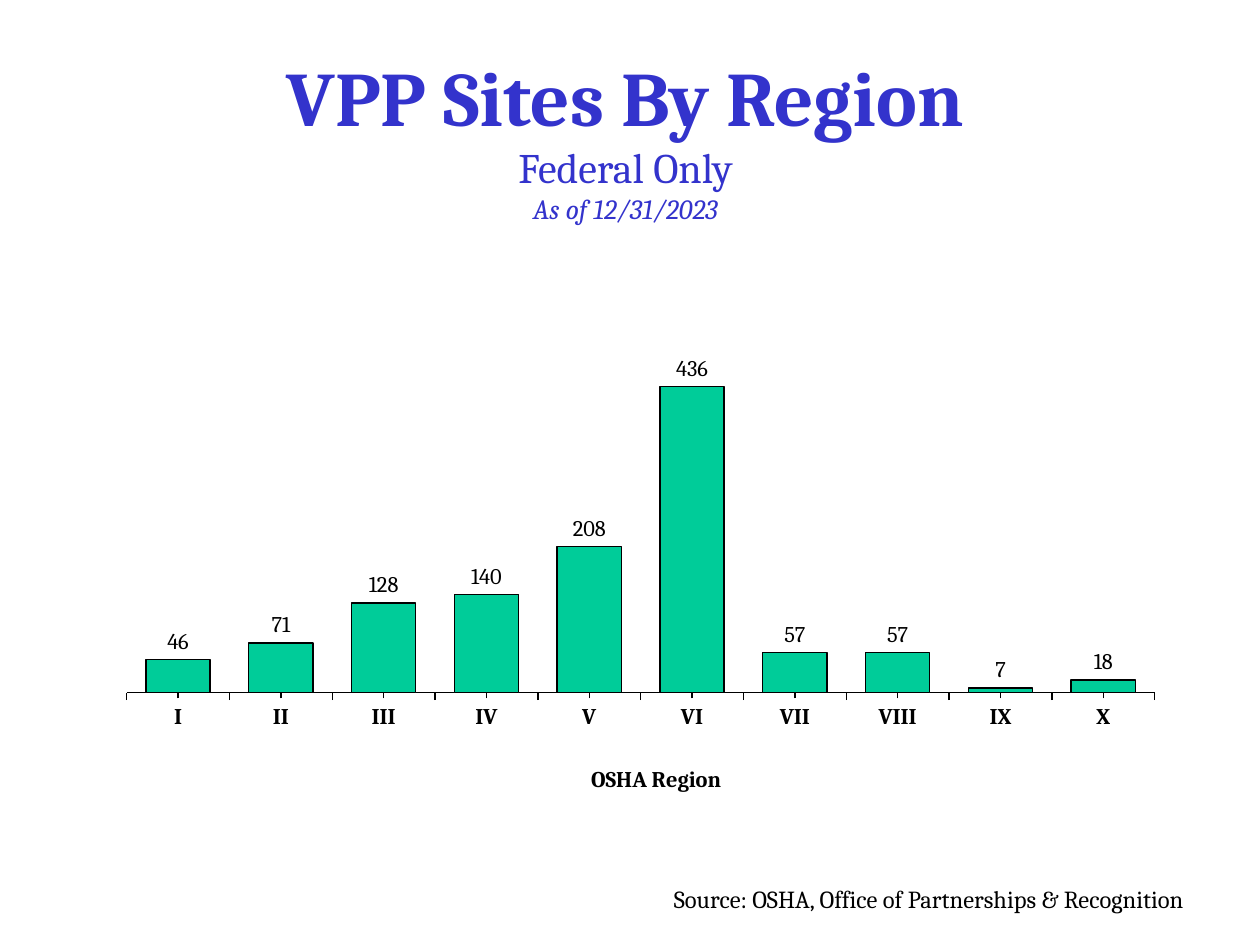
import pptx
import pptx.chart.data
import pptx.dml.color
import pptx.enum.chart
import pptx.enum.text
import pptx.oxml
import pptx.oxml.ns
import pptx.util

Inches, Pt = pptx.util.Inches, pptx.util.Pt
kinds = pptx.enum.chart
FACE = "Cambria"


def paint(font, size, color, bold=False):
    font.name, font.size, font.bold = FACE, Pt(size), bold
    font.color.rgb = pptx.dml.color.RGBColor.from_string(color)


def place(part, index, **spots):
    """Give a chart part a manual layout, as shares of the chart's size."""
    for old in part.findall(pptx.oxml.ns.qn("c:layout")):
        part.remove(old)
    modes = '<c:xMode val="edge"/><c:yMode val="edge"/>'
    inner = '<c:layoutTarget val="inner"/>' if "w" in spots else ""
    sizes = "".join(f'<c:{key} val="{val}"/>' for key, val in spots.items())
    part.insert(index, pptx.oxml.parse_xml(
        f'<c:layout {pptx.oxml.ns.nsdecls("c")}><c:manualLayout>'
        f'{inner}{modes}{sizes}</c:manualLayout></c:layout>'))


deck = pptx.Presentation()
wide, high = Inches(10), Inches(7.5)
deck.slide_width, deck.slide_height = wide, high
slide = deck.slides.add_slide(deck.slide_layouts[6])

# Heading
box = slide.shapes.add_textbox(Inches(0.75), Inches(0.39), Inches(8.43), Inches(1.37))
frame = box.text_frame
frame.word_wrap = True
frame.margin_top = frame.margin_bottom = 0
heads = [("VPP Sites By Region", 44, True, False),
         ("Federal Only", 24, False, False),
         ("As of 12/31/2023", 16, False, True)]
for row, (text, size, bold, slant) in enumerate(heads):
    line = frame.add_paragraph() if row else frame.paragraphs[0]
    line.text = text
    line.alignment = pptx.enum.text.PP_ALIGN.CENTER
    paint(line.font, size, "3333CC", bold)
    line.font.italic = slant

# Column chart
data = pptx.chart.data.CategoryChartData()
data.categories = ["I", "II", "III", "IV", "V", "VI", "VII", "VIII", "IX", "X"]
data.add_series("Series 1", [47, 71, 128, 140, 208, 436, 57, 57, 7, 18])
chart = slide.shapes.add_chart(
    kinds.XL_CHART_TYPE.COLUMN_CLUSTERED,
    Inches(0.75), Inches(2.17), Inches(8.5), Inches(4.5), data).chart
chart.has_legend = chart.has_title = False
paint(chart.font, 12.8, "000000", True)

plot = chart.plots[0]
plot.gap_width = 60
plot.vary_by_categories = False
bars = plot.series[0]
bars.format.fill.solid()
bars.format.fill.fore_color.rgb = pptx.dml.color.RGBColor.from_string("00CC99")

base = chart.category_axis
for edge in (bars.format.line, base.format.line):
    edge.width = Pt(0.8)
    edge.color.rgb = pptx.dml.color.RGBColor.from_string("000000")

tags = bars.data_labels
tags.show_value = True
tags.position = kinds.XL_LABEL_POSITION.OUTSIDE_END
paint(tags.font, 12.8, "000000")
# The first label is typed by hand and differs from its value
first = bars.points[0].data_label
first.text_frame.text = "46"
first.position = kinds.XL_LABEL_POSITION.OUTSIDE_END
paint(first.text_frame.paragraphs[0].runs[0].font, 12.8, "000000")

base.major_tick_mark = base.minor_tick_mark = kinds.XL_TICK_MARK.OUTSIDE
base.tick_label_position = kinds.XL_TICK_LABEL_POSITION.LOW
name = base.axis_title.text_frame
name.text = "OSHA Region"
paint(name.paragraphs[0].font, 12.8, "000000", True)

scale = chart.value_axis
scale.minimum_scale, scale.maximum_scale = 0, 500
scale.has_major_gridlines = False
scale.major_tick_mark = scale.minor_tick_mark = kinds.XL_TICK_MARK.NONE
scale.tick_label_position = kinds.XL_TICK_LABEL_POSITION.NONE
scale.format.line.fill.background()

area = chart.element.find(".//" + pptx.oxml.ns.qn("c:plotArea"))
place(area, 0, x=0.03, y=0.12, w=0.96, h=0.62)
place(base.axis_title.element if hasattr(base.axis_title, "element")
      else area.find(".//" + pptx.oxml.ns.qn("c:title")), 1, x=0.46, y=0.86)

# Source line
note = slide.shapes.add_textbox(Inches(5.25), Inches(6.97), Inches(4.64), Inches(0.34))
note.text_frame.word_wrap = False
credit = note.text_frame.paragraphs[0]
credit.text = "Source: OSHA, Office of Partnerships & Recognition"
paint(credit.font, 14, "000000")

deck.save("out.pptx")
